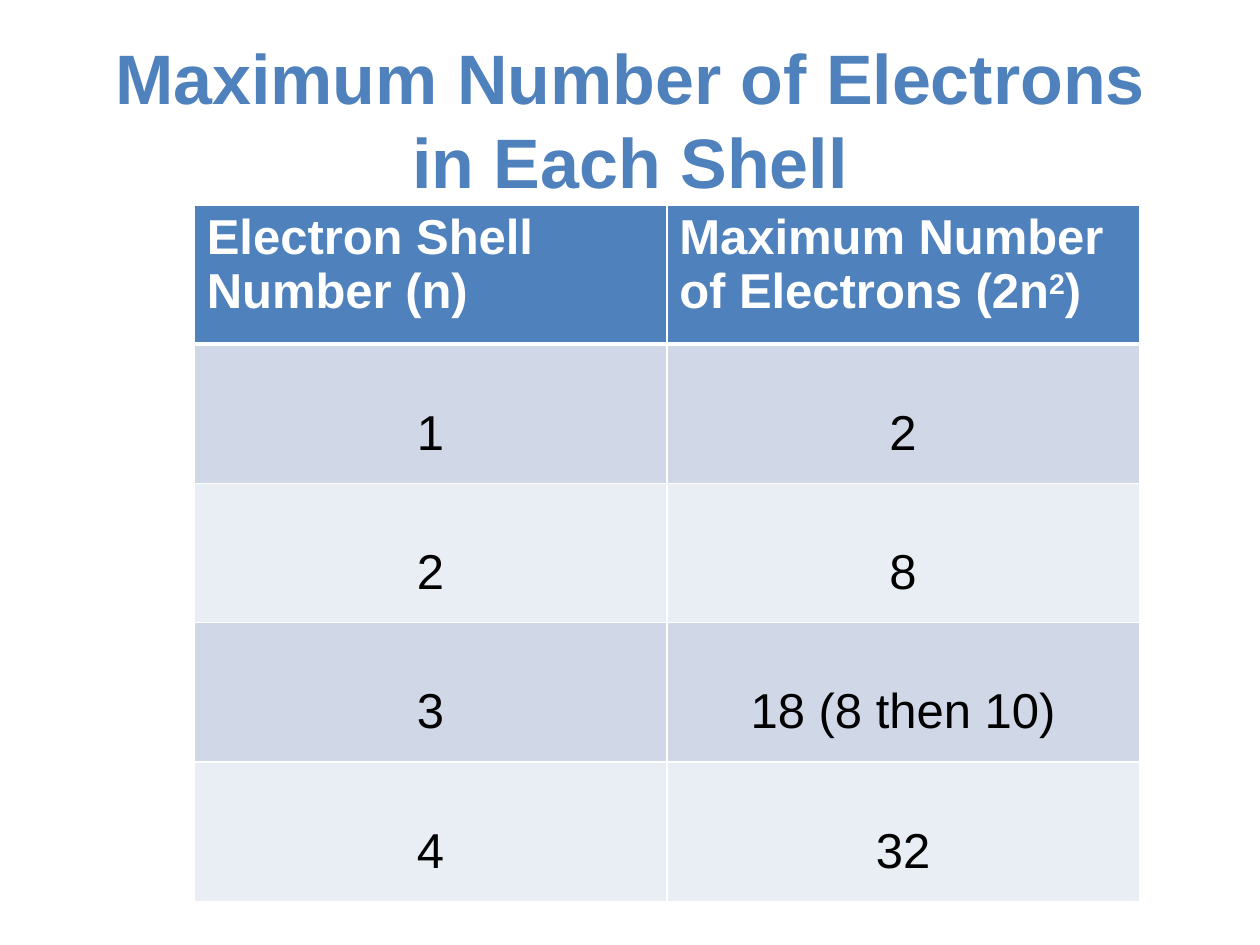
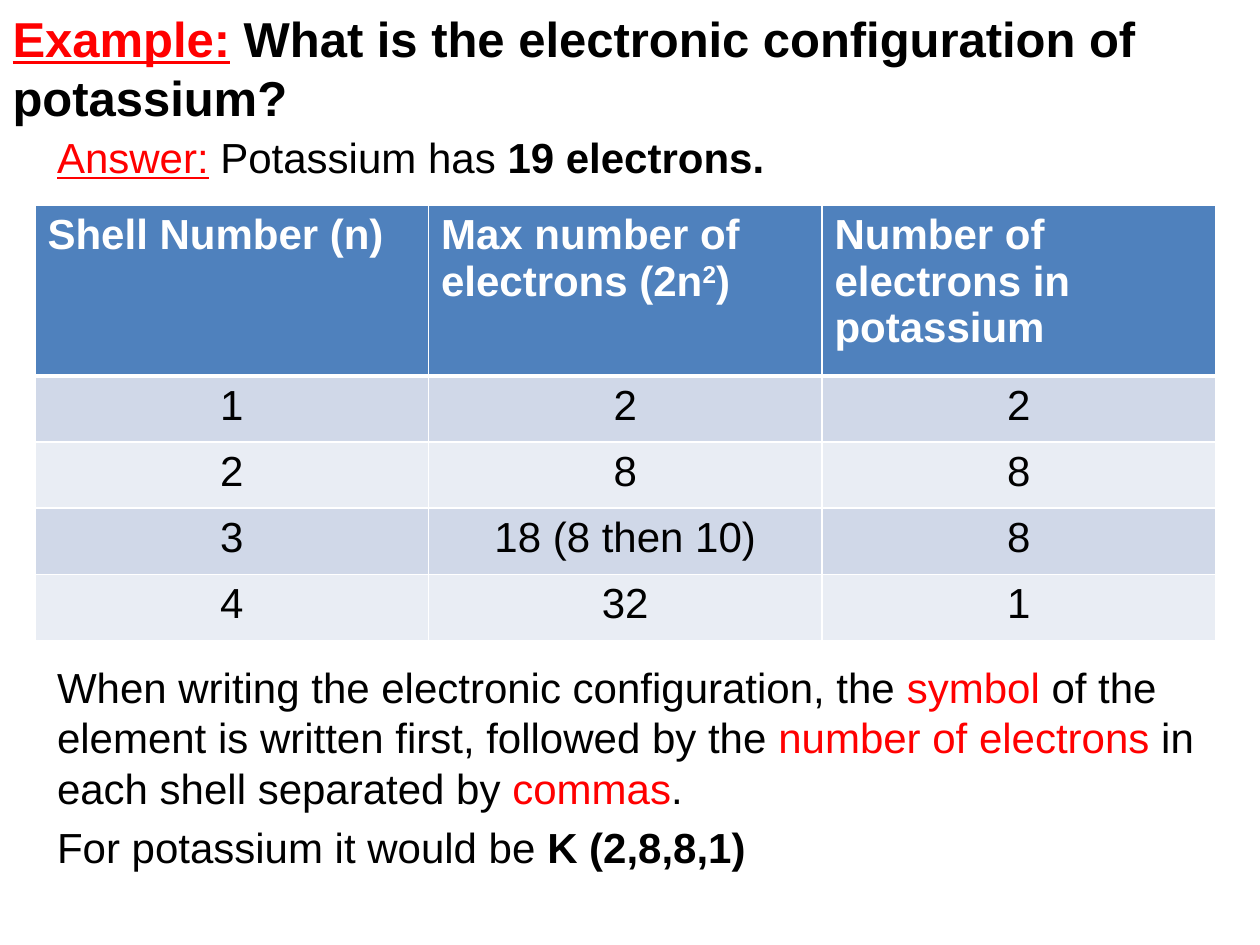
from lxml.etree import SubElement
from pptx import Presentation
from pptx.dml.color import RGBColor
from pptx.enum.text import MSO_ANCHOR, MSO_AUTO_SIZE, PP_ALIGN
from pptx.oxml.ns import qn
from pptx.util import Pt

COLORS = {
    "accent": "4F81BD",
    "highlight": "FF0000",
    "text": "000000",
    "white": "FFFFFF",
    "odd_row": "D0D8E8",
    "even_row": "E9EDF4",
}
FONT = "Arial"

BOLD = {"bold": True}
RED = {"color": "highlight"}
RED_UNDERLINED = {"color": "highlight", "underline": True}
SUPERSCRIPT = {"baseline": 30000}

SHELL_TITLE = ["Maximum Number of Electrons in Each Shell"]
SHELL_HEADER = [
    ["Electron Shell Number (n)"],
    ["Maximum Number of Electrons (2n", ("2", SUPERSCRIPT), ")"],
]
SHELL_ROWS = [("1", "2"), ("2", "8"), ("3", "18 (8 then 10)"), ("4", "32")]

EXAMPLE_TITLE = [
    ("Example:", RED_UNDERLINED),
    " What is the electronic configuration of potassium?",
]
POTASSIUM_HEADER = [
    ["Shell Number (n)"],
    ["Max number of electrons (2n", ("2", SUPERSCRIPT), ")"],
    ["Number of electrons in potassium"],
]
POTASSIUM_COUNTS = ["2", "8", "8", "1"]
POTASSIUM_ROWS = [(*row, count) for row, count in zip(SHELL_ROWS, POTASSIUM_COUNTS)]
EXPLANATION = [
    (0, [("Answer:", RED_UNDERLINED), " Potassium has ", ("19 electrons.", BOLD)]),
    (274, [
        "When writing the electronic configuration, the ",
        ("symbol", RED),
        " of the element is written first, followed by the ",
        ("number of electrons", RED),
        " in each shell separated by ",
        ("commas", RED),
        ".",
    ]),
    (4.8, ["For potassium it would be ", ("K (2,8,8,1)", BOLD)]),
]


def rgb(name):
    return RGBColor.from_string(COLORS[name])


def write(para, spans, *, size, line, align=PP_ALIGN.LEFT, before=0, **common):
    para.alignment = align
    para.line_spacing = Pt(line)
    para.space_before = Pt(before)
    for item in spans:
        text, own = (item, {}) if isinstance(item, str) else item
        style = {"color": "text", "bold": False, "underline": False, **common, **own}
        span = para.add_run()
        span.text = text
        span.font.name = FONT
        span.font.size = Pt(size)
        span.font.bold = style["bold"]
        span.font.underline = style["underline"]
        span.font.color.rgb = rgb(style["color"])
        if "baseline" in style:
            span.font._element.set("baseline", str(style["baseline"]))


def place(box, left, top, width, height, anchor):
    box.left, box.top, box.width, box.height = map(Pt, (left, top, width, height))
    frame = box.text_frame
    frame.word_wrap = True
    frame.auto_size = MSO_AUTO_SIZE.NONE
    frame.vertical_anchor = anchor
    return frame


def add_title(page, spans, bounds, **style):
    frame = place(page.shapes.title, *bounds, MSO_ANCHOR.MIDDLE)
    write(frame.paragraphs[0], spans, bold=True, **style)


def border_cell(cell, bottom):
    properties = cell._tc.get_or_add_tcPr()
    widths = {"a:lnL": 1, "a:lnR": 1, "a:lnT": 1, "a:lnB": bottom}
    for position, (tag, width) in enumerate(widths.items()):
        border = SubElement(properties, qn(tag), w=str(Pt(width)))
        fill = SubElement(border, qn("a:solidFill"))
        SubElement(fill, qn("a:srgbClr"), val=COLORS["white"])
        properties.insert(position, border)


def add_shell_table(page, header, rows, left, top, width, heights, size, line, bottom_margin=None):
    header_height, row_height = heights
    total = header_height + row_height * len(rows)
    table = page.shapes.add_table(
        len(rows) + 1, len(header), Pt(left), Pt(top), Pt(width), Pt(total)
    ).table
    for column in table.columns:
        column.width = Pt(width / len(header))
    contents = [header] + [[[value] for value in row] for row in rows]
    for index, values in enumerate(contents):
        is_header = index == 0
        table.rows[index].height = Pt(header_height if is_header else row_height)
        fill = "accent" if is_header else "odd_row" if index % 2 else "even_row"
        for cell, spans in zip(table.rows[index].cells, values):
            cell.fill.solid()
            cell.fill.fore_color.rgb = rgb(fill)
            border_cell(cell, 3 if is_header else 1)
            if bottom_margin and not is_header:
                cell.vertical_anchor = MSO_ANCHOR.BOTTOM
                cell.margin_bottom = Pt(bottom_margin)
            write(
                cell.text_frame.paragraphs[0], spans, size=size, line=line,
                align=PP_ALIGN.LEFT if is_header else PP_ALIGN.CENTER,
                color="white" if is_header else "text", bold=is_header,
            )


def build_shell_page(deck):
    page = deck.slides.add_slide(deck.slide_layouts[5])
    add_title(page, SHELL_TITLE, (54, 9.5, 612, 116), size=40, line=48,
              align=PP_ALIGN.CENTER, color="accent")
    add_shell_table(page, SHELL_HEADER, SHELL_ROWS, 111, 117, 540, (79.6, 79.6),
                    size=28, line=30.9, bottom_margin=13)


def build_potassium_page(deck):
    page = deck.slides.add_slide(deck.slide_layouts[0])
    add_title(page, EXAMPLE_TITLE, (0, 0, 703, 77), size=28, line=33.6)
    frame = place(page.placeholders[1], 25.4, 71.3, 669, 442, MSO_ANCHOR.TOP)
    for index, (before, spans) in enumerate(EXPLANATION):
        para = frame.add_paragraph() if index else frame.paragraphs[0]
        write(para, spans, size=24, line=28.9, before=before)
    add_shell_table(page, POTASSIUM_HEADER, POTASSIUM_ROWS, 20, 117, 674.6, (97.8, 37.8),
                    size=24, line=26.8)


def main():
    deck = Presentation()
    deck.slide_width, deck.slide_height = Pt(720), Pt(540)
    build_shell_page(deck)
    build_potassium_page(deck)
    deck.save("out.pptx")


if __name__ == "__main__":
    main()
